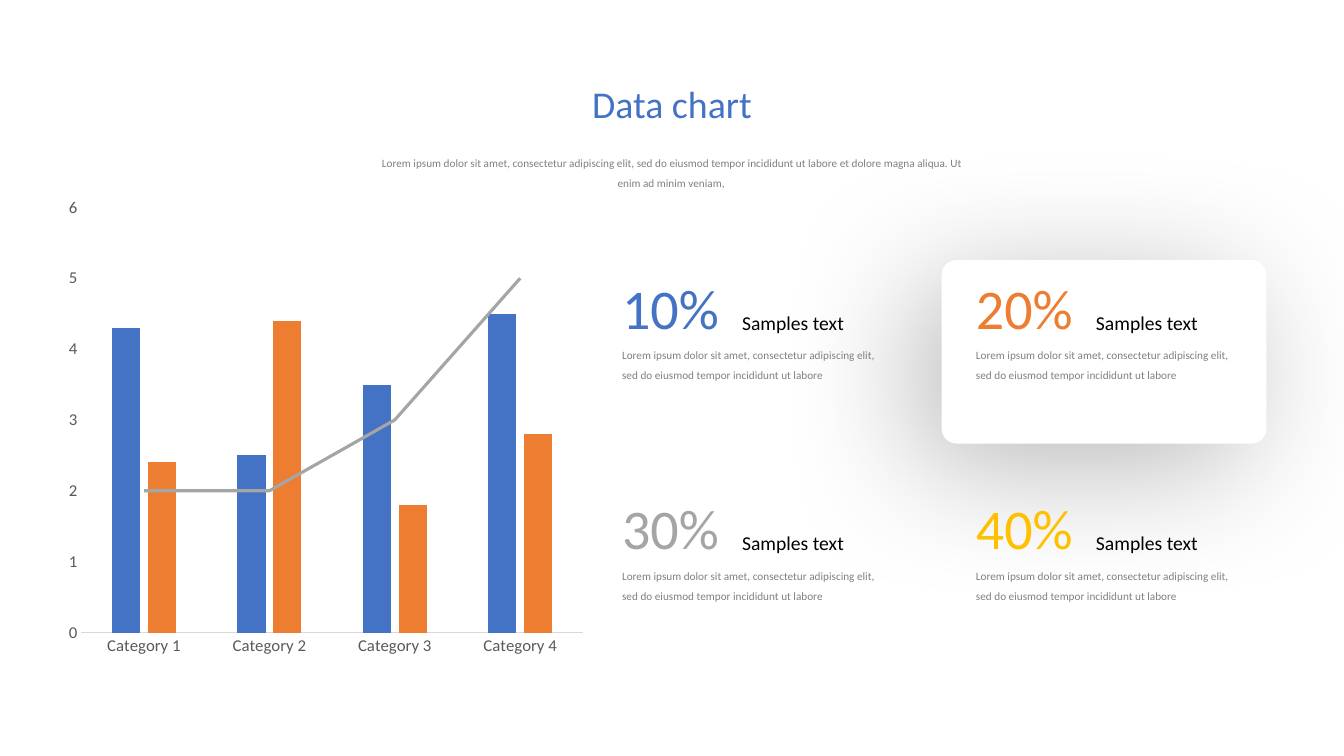
from lxml import etree
from pptx import Presentation
from pptx.chart.data import CategoryChartData
from pptx.dml.color import RGBColor
from pptx.enum.chart import XL_CHART_TYPE, XL_MARKER_STYLE, XL_TICK_MARK
from pptx.enum.shapes import MSO_SHAPE
from pptx.enum.text import MSO_AUTO_SIZE, PP_ALIGN
from pptx.oxml import parse_xml
from pptx.oxml.ns import nsdecls, qn
from pptx.util import Inches, Pt

COLUMNS = XL_CHART_TYPE.COLUMN_CLUSTERED
NO_MARKER = XL_MARKER_STYLE.NONE
NO_TICK = XL_TICK_MARK.NONE
ROUNDED = MSO_SHAPE.ROUNDED_RECTANGLE
GROW = MSO_AUTO_SIZE.SHAPE_TO_FIT_TEXT
LEFT, CENTER = PP_ALIGN.LEFT, PP_ALIGN.CENTER

FONT = "Calibri"
COLORS = {
    "blue": "4472C4", "orange": "ED7D31", "gray": "A5A5A5", "gold": "FFC000",
    "body": "808080", "axis_text": "595959", "axis_line": "D9D9D9",
    "black": "000000", "white": "FFFFFF",
}
INTRO = ("Lorem ipsum dolor sit amet, consectetur adipiscing elit, sed do eiusmod tempor "
         "incididunt ut labore et dolore magna aliqua. Ut enim ad minim veniam, ")
DETAIL = ("Lorem ipsum dolor sit amet, consectetur adipiscing elit, "
          "sed do eiusmod tempor incididunt ut labore")
CATEGORIES = ["Category 1", "Category 2", "Category 3", "Category 4"]
SERIES = [
    ("Series 1", (4.3, 2.5, 3.5, 4.5), "blue"),
    ("Series 2", (2.4, 4.4, 1.8, 2.8), "orange"),
    ("Series 3", (2, 2, 3, 5), "gray"),
]
PLOT_AREA = {"x": 0.034, "y": 0.018, "w": 0.955, "h": 0.939}
STATS = [("10%", "blue"), ("20%", "orange"), ("30%", "gray"), ("40%", "gold")]
STAT_LEFT, STAT_TOP = 6.17, 2.71
STAT_STEP_X, STAT_STEP_Y = 3.51, 2.19


def rgb(name):
    """Return the palette colour of that name."""
    return RGBColor.from_string(COLORS[name])


def add_text(slide, box, text, size, color, align=LEFT, wrap=False, spacing=None):
    """Add a text box without margins and return its font."""
    frame = slide.shapes.add_textbox(*map(Inches, box)).text_frame
    frame.margin_left = frame.margin_right = frame.margin_top = frame.margin_bottom = 0
    frame.word_wrap = wrap
    frame.auto_size = GROW
    frame.text = text
    paragraph = frame.paragraphs[0]
    paragraph.alignment = align
    paragraph.line_spacing = spacing
    font = paragraph.runs[0].font
    font.name, font.size = FONT, Pt(size)
    font.color.rgb = rgb(color)
    return font


def add_title(slide):
    """Add the heading with its blue to gold gradient."""
    font = add_text(slide, (5.66, 0.8, 2.01, 0.45), "Data chart", 27, "blue", CENTER)
    font.fill.gradient()
    font.fill.gradient_angle = 315
    for stop, color in zip(font.fill.gradient_stops, ("blue", "gold")):
        stop.color.rgb = rgb(color)


def add_highlight_card(slide):
    """Add the white rounded card with a wide soft shadow."""
    card = slide.shapes.add_shape(ROUNDED, *map(Inches, (9.34, 2.58, 3.22, 1.82)))
    card.adjustments[0] = 0.08
    card.fill.solid()
    card.fill.fore_color.rgb = rgb("white")
    card.line.fill.background()
    card.shadow.inherit = False
    effects = card._element.spPr.find(qn("a:effectLst"))
    effects.append(parse_xml(
        f'<a:outerShdw {nsdecls("a")} blurRad="{int(Pt(100))}" dist="{int(Pt(24))}" '
        f'dir="{135 * 60000}" algn="tr" rotWithShape="0">'
        f'<a:srgbClr val="{COLORS["black"]}"><a:alpha val="28000"/></a:srgbClr>'
        '</a:outerShdw>'))


def add_stat(slide, left, top, percent, color):
    """Add a percentage with its label and detail text."""
    add_text(slide, (left, top, 1.15, 0.67), percent, 40, color)
    add_text(slide, (left + 1.19, top + 0.37, 1.28, 0.24), "Samples text", 14, "black")
    add_text(slide, (left, top + 0.68, 2.62, 0.58), DETAIL, 8, "body", wrap=True, spacing=1.5)


def style_axis(axis):
    """Set the text and ticks of an axis and drop its gridlines."""
    axis.has_major_gridlines = False
    axis.major_tick_mark = axis.minor_tick_mark = NO_TICK
    font = axis.tick_labels.font
    font.name, font.size = FONT, Pt(12)
    font.color.rgb = rgb("axis_text")


def move_last_series_to_line(chart):
    """Turn the last column series into a line on the same axes."""
    columns = chart.plots[0]._element
    series = columns.findall(qn("c:ser"))[-1]
    line_plot = parse_xml(
        f'<c:lineChart {nsdecls("c")}><c:grouping val="standard"/>'
        '<c:varyColors val="0"/><c:marker val="1"/></c:lineChart>')
    for column_only in series.findall(qn("c:invertIfNegative")):
        series.remove(column_only)
    line_plot.insert(2, series)
    for axis_id in columns.findall(qn("c:axId")):
        etree.SubElement(line_plot, qn("c:axId")).set("val", axis_id.get("val"))
    columns.addnext(line_plot)
    trend = chart.plots[1].series[0]
    trend.smooth = False
    trend.marker.style = NO_MARKER


def set_plot_area(chart):
    """Fix the inner plot area as fractions of the chart."""
    places = "".join(f'<c:{side}Mode val="edge"/>' for side in "xy")
    places += "".join(f'<c:{side} val="{share}"/>' for side, share in PLOT_AREA.items())
    area = chart._chartSpace.chart.plotArea
    for layout in area.findall(qn("c:layout")):
        area.remove(layout)
    area.insert(0, parse_xml(
        f'<c:layout {nsdecls("c")}><c:manualLayout><c:layoutTarget val="inner"/>'
        f'{places}</c:manualLayout></c:layout>'))


def add_combined_chart(slide):
    """Add the chart of two column series and one line."""
    data = CategoryChartData()
    data.categories = CATEGORIES
    for name, values, _ in SERIES:
        data.add_series(name, values)
    box = map(Inches, (0.63, 1.96, 5.21, 4.55))
    chart = slide.shapes.add_chart(COLUMNS, *box, data).chart
    chart.has_legend = chart.has_title = False
    chart.font.name, chart.font.size = FONT, Pt(10)
    chart.font.color.rgb = rgb("black")
    columns = chart.plots[0]
    columns.gap_width, columns.overlap = 219, -27
    columns.vary_by_categories = False
    for series, (_, _, color) in zip(columns.series, SERIES[:-1]):
        series.format.fill.solid()
        series.format.fill.fore_color.rgb = rgb(color)
    trend_line = columns.series[len(SERIES) - 1].format.line
    trend_line.color.rgb = rgb(SERIES[-1][2])
    trend_line.width = Pt(2.25)
    for axis in (chart.category_axis, chart.value_axis):
        style_axis(axis)
    chart.category_axis.format.line.color.rgb = rgb("axis_line")
    chart.category_axis.format.line.width = Pt(0.75)
    chart.value_axis.format.line.fill.background()
    chart.value_axis.minimum_scale, chart.value_axis.maximum_scale = 0, 6
    chart.value_axis.major_unit = 1
    move_last_series_to_line(chart)
    set_plot_area(chart)


def main():
    """Build the slide and save it."""
    deck = Presentation()
    deck.slide_width, deck.slide_height = Inches(13.33), Inches(7.5)
    slide = deck.slides.add_slide(deck.slide_layouts[6])
    add_combined_chart(slide)
    add_highlight_card(slide)
    add_title(slide)
    add_text(slide, (3.67, 1.48, 6, 0.38), INTRO, 8, "body", CENTER, wrap=True, spacing=1.5)
    for index, (percent, color) in enumerate(STATS):
        row, column = divmod(index, 2)
        add_stat(slide, STAT_LEFT + column * STAT_STEP_X, STAT_TOP + row * STAT_STEP_Y,
                 percent, color)
    deck.save("out.pptx")


if __name__ == "__main__":
    main()
